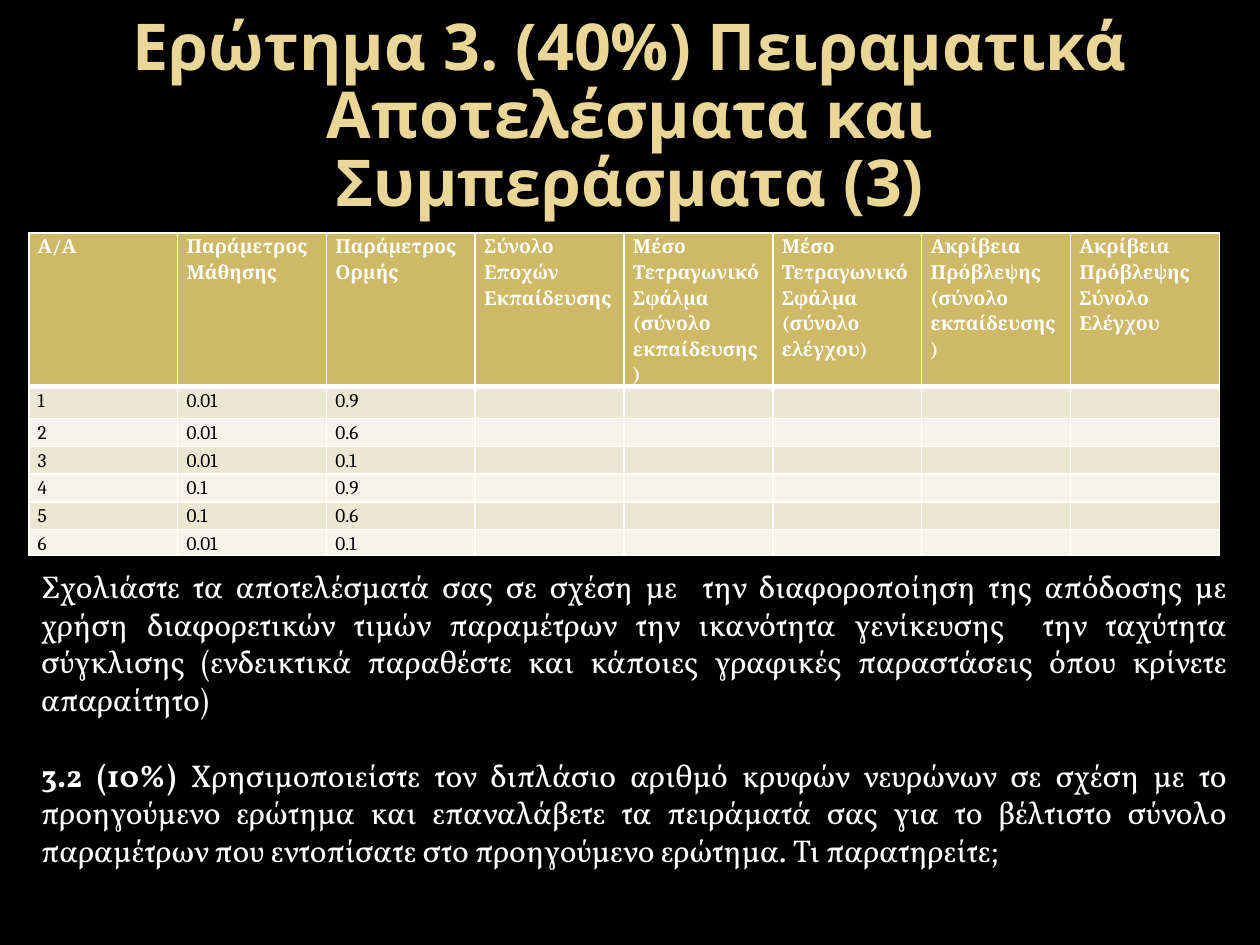
from dataclasses import dataclass

from lxml.etree import SubElement
from pptx import Presentation
from pptx.dml.color import RGBColor
from pptx.enum.text import MSO_ANCHOR, MSO_AUTO_SIZE, PP_ALIGN
from pptx.oxml.ns import qn
from pptx.slide import Slide
from pptx.util import Cm, Pt


@dataclass(frozen=True)
class Theme:
    background: str = "000000"
    title: str = "EAD696"
    light: str = "FFFFFF"
    dark: str = "000000"
    header: str = "CEB966"
    bands: tuple = ("EDE6D3", "F6F3EA")
    title_font: str = "Noto Sans"
    table_font: str = "Cambria"
    body_font: str = "Vollkorn"
    title_size: float = 36.9
    table_size: float = 11
    body_size: float = 18


@dataclass(frozen=True)
class Box:
    left: float
    top: float
    width: float
    height: float

    def lengths(self) -> tuple:
        return Cm(self.left), Cm(self.top), Cm(self.width), Cm(self.height)


THEME = Theme()
TITLE_BOX = Box(1.27, 0.79, 22.86, 3.18)
TABLE_BOX = Box(0.58, 4.7, 24, 6.43)
BODY_BOX = Box(0.58, 11.3, 24.41, 7.19)
ROW_HEIGHTS = (3.07, 0.64, 0.56, 0.56, 0.56, 0.56, 0.48)

TITLE = "Ερώτημα 3. (40%) Πειραματικά Αποτελέσματα και Συμπεράσματα (3)"
HEADERS = (
    "Α/Α",
    "Παράμετρος Μάθησης",
    "Παράμετρος Ορμής",
    "Σύνολο Εποχών Εκπαίδευσης",
    "Μέσο Τετραγωνικό Σφάλμα (σύνολο εκπαίδευσης)",
    "Μέσο Τετραγωνικό Σφάλμα (σύνολο ελέγχου)",
    "Ακρίβεια Πρόβλεψης (σύνολο εκπαίδευσης)",
    "Ακρίβεια Πρόβλεψης Σύνολο Ελέγχου",
)
# Learning rate and momentum of each experiment
EXPERIMENTS = (
    ("0.01", "0.9"),
    ("0.01", "0.6"),
    ("0.01", "0.1"),
    ("0.1", "0.9"),
    ("0.1", "0.6"),
    ("0.01", "0.1"),
)
COMMENT = (
    "Σχολιάστε τα αποτελέσματά σας σε σχέση με  την διαφοροποίηση της απόδοσης με "
    "χρήση διαφορετικών τιμών παραμέτρων την ικανότητα γενίκευσης  την ταχύτητα "
    "σύγκλισης (ενδεικτικά παραθέστε και κάποιες γραφικές παραστάσεις όπου κρίνετε "
    "απαραίτητο)"
)
QUESTION_NUMBER = "3.2 (10%)"
QUESTION = (
    " Χρησιμοποιείστε τον διπλάσιο αριθμό κρυφών νευρώνων σε σχέση με το "
    "προηγούμενο ερώτημα και επαναλάβετε τα πειράματά σας για το βέλτιστο σύνολο "
    "παραμέτρων που εντοπίσατε στο προηγούμενο ερώτημα. Τι παρατηρείτε;"
)


def set_font(font, name: str, size: float, color: str, bold: bool = False) -> None:
    font.name = name
    font.size = Pt(size)
    font.bold = bold
    font.color.rgb = RGBColor.from_string(color)


def set_borders(cell, bottom: float, top: float) -> None:
    tc_pr = cell._tc.get_or_add_tcPr()
    for side, width in (("L", 1), ("R", 1), ("T", top), ("B", bottom)):
        ln = SubElement(tc_pr, qn(f"a:ln{side}"), w=str(Pt(width)))
        fill = SubElement(ln, qn("a:solidFill"))
        SubElement(fill, qn("a:srgbClr"), val=THEME.light)


def fill_cell(cell, text: str, row: int) -> None:
    is_header = row == 0
    set_borders(cell, bottom=3 if is_header else 1, top=3 if row == 1 else 1)
    cell.fill.solid()
    color = THEME.header if is_header else THEME.bands[(row - 1) % 2]
    cell.fill.fore_color.rgb = RGBColor.from_string(color)
    cell.margin_left = cell.margin_right = Cm(0.18)
    cell.margin_top = cell.margin_bottom = 0
    p = cell.text_frame.paragraphs[0]
    p.alignment = PP_ALIGN.JUSTIFY
    if text:
        p.text = text
        p.line_spacing = 1.15
    else:
        # An empty cell takes its row height from the end-of-paragraph size
        p._p.get_or_add_endParaRPr().set("sz", str(int(THEME.table_size * 100)))
    set_font(p.font, THEME.table_font, THEME.table_size,
             THEME.light if is_header else THEME.dark, is_header)


def add_title(slide: Slide) -> None:
    sp = slide.shapes.title
    sp.left, sp.top, sp.width, sp.height = TITLE_BOX.lengths()
    tf = sp.text_frame
    tf.auto_size = MSO_AUTO_SIZE.NONE
    tf.vertical_anchor = MSO_ANCHOR.MIDDLE
    p = tf.paragraphs[0]
    p.text = TITLE
    p.alignment = PP_ALIGN.CENTER
    p.line_spacing = 0.88
    set_font(p.font, THEME.title_font, THEME.title_size, THEME.title, True)


def add_results_table(slide: Slide) -> None:
    rows = [HEADERS] + [(str(n), *pair) for n, pair in enumerate(EXPERIMENTS, 1)]
    cols = len(HEADERS)
    table = slide.shapes.add_table(len(rows), cols, *TABLE_BOX.lengths()).table
    for column in table.columns:
        column.width = Cm(TABLE_BOX.width / cols)
    for r, (values, height) in enumerate(zip(rows, ROW_HEIGHTS)):
        table.rows[r].height = Cm(height)
        for c in range(cols):
            fill_cell(table.cell(r, c), values[c] if c < len(values) else "", r)


def add_body(slide: Slide) -> None:
    tf = slide.shapes.add_textbox(*BODY_BOX.lengths()).text_frame
    tf.word_wrap = True
    comment, question = tf.paragraphs[0], tf.add_paragraph()
    comment.text = COMMENT
    question.add_run().text = QUESTION_NUMBER
    question.runs[0].font.bold = True
    question.add_run().text = QUESTION
    question.space_before = Pt(21.5)
    for p in (comment, question):
        p.alignment = PP_ALIGN.JUSTIFY
        set_font(p.font, THEME.body_font, THEME.body_size, THEME.light)


def main() -> None:
    prs = Presentation()
    prs.slide_width, prs.slide_height = Cm(25.4), Cm(19.05)
    slide = prs.slides.add_slide(prs.slide_layouts[5])
    slide.background.fill.solid()
    slide.background.fill.fore_color.rgb = RGBColor.from_string(THEME.background)

    add_title(slide)
    add_results_table(slide)
    add_body(slide)
    prs.save("out.pptx")


if __name__ == "__main__":
    main()
